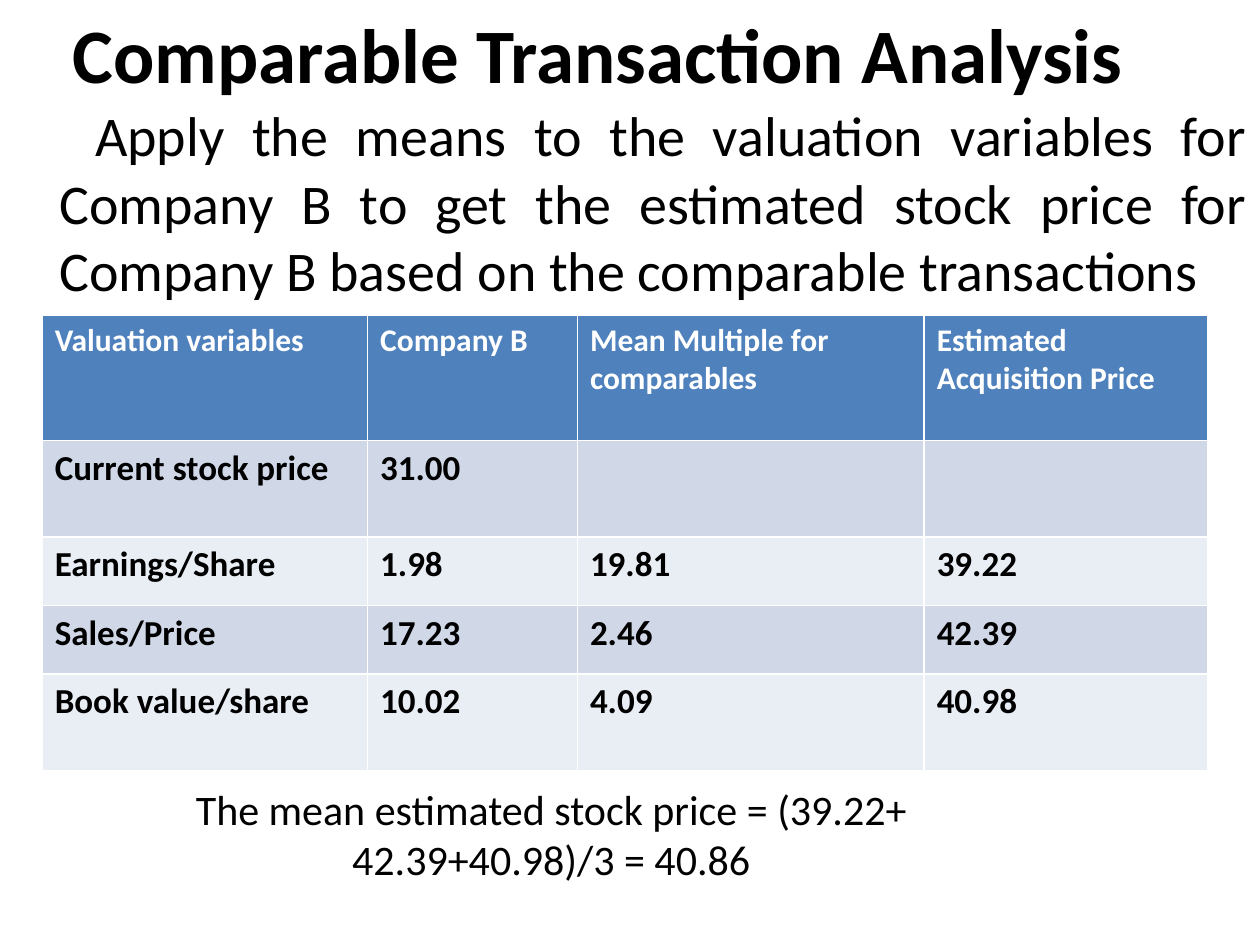
from pptx import Presentation
from pptx import util as u
from pptx.dml.color import RGBColor
from pptx.enum import text

BLACK = RGBColor(0x00, 0x00, 0x00)
WHITE = RGBColor(0xFF, 0xFF, 0xFF)
HEADER = RGBColor(0x4F, 0x81, 0xBD)
BANDS = [RGBColor(0xD0, 0xD8, 0xE8), RGBColor(0xE9, 0xED, 0xF4)]


def format_runs(tf, size, color, bold):
    for p in tf.paragraphs:
        for r in p.runs:
            r.font.name = "Calibri"
            r.font.size = u.Pt(size)
            r.font.bold = bold
            r.font.color.rgb = color


def add_text(s, box, content, size, align, bold=False):
    tf = s.shapes.add_textbox(*[u.Cm(v) for v in box]).text_frame
    tf.word_wrap = True
    tf.text = content
    tf.paragraphs[0].alignment = align
    format_runs(tf, size, BLACK, bold)
    return tf


prs = Presentation()
prs.slide_width, prs.slide_height = u.Cm(25.4), u.Cm(19.05)
s = prs.slides.add_slide(prs.slide_layouts[6])

# Title
tf = add_text(s, (0, 0, 24.13, 2.12), "Comparable Transaction Analysis", 44,
              text.PP_ALIGN.CENTER, bold=True)
tf.vertical_anchor = text.MSO_ANCHOR.MIDDLE

# Introduction, with an indented first line
tf = add_text(s, (0, 1.91, 25.4, 17.58),
              "Apply the means to the valuation variables for Company B to get "
              "the estimated stock price for Company B based on the comparable "
              "transactions", 32, text.PP_ALIGN.JUSTIFY)
pPr = tf.paragraphs[0]._p.get_or_add_pPr()
pPr.set("marL", str(u.Cm(0.95)))
pPr.set("indent", str(u.Cm(0.72)))

# Valuation table
rows = [
    ["Valuation variables", "Company B", "Mean Multiple for\ncomparables",
     "Estimated\nAcquisition Price"],
    ["Current stock price", "31.00", "", ""],
    ["Earnings/Share", "1.98", "19.81", "39.22"],
    ["Sales/Price", "17.23", "2.46", "42.39"],
    ["Book value/share", "10.02", "4.09", "40.98"],
]
widths = [6.56, 4.23, 6.99, 5.72]
heights = [2.53, 1.95, 1.38, 1.38, 1.95]
table = s.shapes.add_table(len(rows), len(widths), u.Cm(0.85), u.Cm(6.35),
                           u.Cm(sum(widths)), u.Cm(sum(heights))).table
for column, width in zip(table.columns, widths):
    column.width = u.Cm(width)
for i, (row, height) in enumerate(zip(rows, heights)):
    table.rows[i].height = u.Cm(height)
    for j, value in enumerate(row):
        cell = table.cell(i, j)
        cell.fill.solid()
        cell.fill.fore_color.rgb = BANDS[(i - 1) % 2] if i else HEADER
        cell.text_frame.text = value
        format_runs(cell.text_frame, 20 if i else 18, BLACK if i else WHITE, True)

# Mean price
add_text(s, (1.06, 15.67, 20.11, 2.31),
         "The mean estimated stock price = (39.22+\v42.39+40.98)/3 = 40.86", 24,
         text.PP_ALIGN.CENTER)

prs.save("out.pptx")
